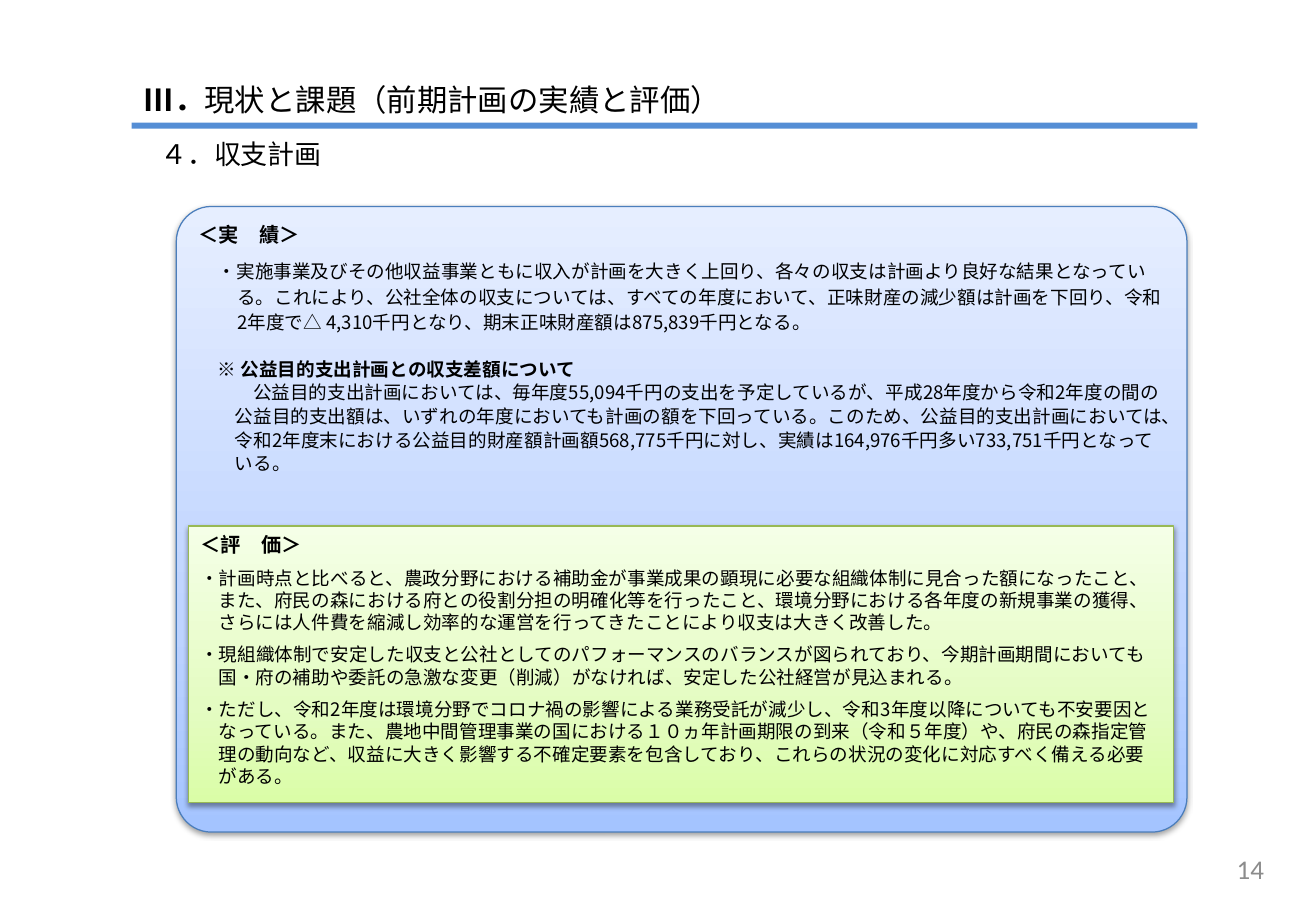
from lxml import etree
from pptx import Presentation
from pptx.dml.color import RGBColor
from pptx.enum.shapes import MSO_SHAPE
from pptx.enum.text import MSO_ANCHOR, MSO_AUTO_SIZE, PP_ALIGN
from pptx.oxml.ns import qn
from pptx.util import Inches, Pt

RECTANGLE, ROUNDED = MSO_SHAPE.RECTANGLE, MSO_SHAPE.ROUNDED_RECTANGLE
TOP, MIDDLE = MSO_ANCHOR.TOP, MSO_ANCHOR.MIDDLE
LEFT, RIGHT = PP_ALIGN.LEFT, PP_ALIGN.RIGHT
NO_AUTOFIT = MSO_AUTO_SIZE.NONE

COLORS = {
    "text": "000000", "page": "8C8C8C", "rule": "558ED5", "shadow": "000000",
    "blue_line": "4B7EBC", "green_line": "98B955",
}
# Gradient stops from the bottom edge upwards: percent -> colour
BLUE_FADE = {0: "A4C4FF", 35: "BFD4FF", 100: "E6EEFF"}
GREEN_FADE = {0: "DAFDA7", 35: "E4FCC2", 100: "F5FFE7"}
JAPANESE, LATIN = "Noto Sans CJK JP", "Calibri"


def rgb(name):
    return RGBColor.from_string(COLORS[name])


def add_color(parent, value, alpha=100):
    color = etree.SubElement(parent, qn("a:srgbClr"), val=value)
    if alpha < 100:
        etree.SubElement(color, qn("a:alpha"), val=str(alpha * 1000))


class SlideBuilder:
    """Places elements by percent of the slide's width and height."""

    def __init__(self, width, height):
        self.deck = Presentation()
        self.deck.slide_width, self.deck.slide_height = Inches(width), Inches(height)
        self.slide = self.deck.slides.add_slide(self.deck.slide_layouts[1])
        self.shapes = self.slide.shapes

    def frame(self, left, top, width, height):
        across, down = self.deck.slide_width / 100, self.deck.slide_height / 100
        return int(left * across), int(top * down), int(width * across), int(height * down)

    def place(self, shape, area):
        shape.left, shape.top, shape.width, shape.height = self.frame(*area)
        self.shapes._spTree.append(shape._element)  # bring to front

    def set_text(self, shape, paragraphs, anchor=TOP):
        frame = shape.text_frame
        frame.word_wrap, frame.auto_size = True, NO_AUTOFIT
        frame.vertical_anchor = anchor
        for index, options in enumerate(paragraphs):
            paragraph = frame.paragraphs[0] if index == 0 else frame.add_paragraph()
            self.style(paragraph, **options)

    def style(self, paragraph, text, size=11, bold=False, bold_lead="", color="text",
              font=JAPANESE, align=LEFT, before=0, spacing=1.0, margin=0, first=0):
        if bold_lead:
            lead = paragraph.add_run()
            lead.text, lead.font.bold = bold_lead, True
        paragraph.add_run().text = text
        paragraph.alignment, paragraph.line_spacing = align, spacing
        paragraph.space_before, paragraph.space_after = Pt(before), Pt(0)
        properties = paragraph._p.get_or_add_pPr()
        properties.set("marL", str(Inches(margin)))
        properties.set("indent", str(Inches(first)))
        etree.SubElement(properties, qn("a:buNone"))
        face = paragraph.font
        face.name, face.size, face.bold = font, Pt(size), bold
        face.color.rgb = rgb(color)
        etree.SubElement(face._element, qn("a:ea"), typeface=font)

    def title(self, area, **options):
        heading = self.shapes.title
        self.place(heading, area)
        self.set_text(heading, [options], MIDDLE)

    def text(self, area, anchor=TOP, **options):
        self.set_text(self.shapes.add_textbox(*self.frame(*area)), [options], anchor)

    def bar(self, area, color):
        bar = self.shapes.add_shape(RECTANGLE, *self.frame(*area))
        bar.fill.solid()
        bar.fill.fore_color.rgb = rgb(color)
        bar.line.fill.background()
        bar.shadow.inherit = False

    def rounded_panel(self, area, corner, fade, line, paragraphs):
        panel = self.shapes.add_shape(ROUNDED, *self.frame(*area))
        panel.adjustments[0] = corner
        self.decorate(panel, fade, line)
        self.set_text(panel, paragraphs)

    def list_panel(self, area, fade, line, paragraphs):
        panel = self.shapes.placeholders[1]
        self.place(panel, area)
        self.decorate(panel, fade, line)
        self.set_text(panel, paragraphs)

    def decorate(self, shape, fade, line):
        shape.fill.gradient()
        shape.fill.gradient_angle = 90
        stops = shape._element.spPr.find(qn("a:gradFill")).find(qn("a:gsLst"))
        stops.clear()
        for percent, value in fade.items():
            add_color(etree.SubElement(stops, qn("a:gs"), pos=str(percent * 1000)), value)
        shape.line.color.rgb, shape.line.width = rgb(line), Pt(0.75)
        # Soft shadow below the panel
        shape.shadow.inherit = False
        effects = shape._element.spPr.find(qn("a:effectLst"))
        shadow = etree.SubElement(effects, qn("a:outerShdw"), blurRad=str(Pt(3.1)),
                                  dist=str(Pt(1.6)), dir="5400000", rotWithShape="0")
        add_color(shadow, COLORS["shadow"], alpha=38)


RESULTS = [
    dict(text="＜実　績＞", size=12, bold=True, before=2.4),
    dict(text="・実施事業及びその他収益事業ともに収入が計画を大きく上回り、各々の収支は計画より良好な結果となっている。"
              "これにより、公社全体の収支については、すべての年度において、正味財産の減少額は計画を下回り、"
              "令和2年度で△ 4,310千円となり、期末正味財産額は875,839千円となる。",
         before=6, spacing=Pt(15), margin=0.32, first=-0.16),
    dict(text="※ 公益目的支出計画との収支差額について", bold=True, before=12, spacing=1.2, first=0.16),
    dict(text="公益目的支出計画においては、毎年度55,094千円の支出を予定しているが、平成28年度から令和2年度の間の"
              "公益目的支出額は、いずれの年度においても計画の額を下回っている。このため、公益目的支出計画においては、"
              "令和2年度末における公益目的財産額計画額568,775千円に対し、実績は164,976千円多い733,751千円となっている。",
         spacing=Pt(14), margin=0.3, first=0.15),
]
EVALUATION_POINTS = [
    "・計画時点と比べると、農政分野における補助金が事業成果の顕現に必要な組織体制に見合った額になったこと、"
    "また、府民の森における府との役割分担の明確化等を行ったこと、環境分野における各年度の新規事業の獲得、"
    "さらには人件費を縮減し効率的な運営を行ってきたことにより収支は大きく改善した。",
    "・現組織体制で安定した収支と公社としてのパフォーマンスのバランスが図られており、"
    "今期計画期間においても国・府の補助や委託の急激な変更（削減）がなければ、安定した公社経営が見込まれる。",
    "・ただし、令和2年度は環境分野でコロナ禍の影響による業務受託が減少し、令和3年度以降についても不安要因となっている。"
    "また、農地中間管理事業の国における１０ヵ年計画期限の到来（令和５年度）や、府民の森指定管理の動向など、"
    "収益に大きく影響する不確定要素を包含しており、これらの状況の変化に対応すべく備える必要がある。",
]
EVALUATION = [dict(text="＜評　価＞", size=12, bold=True, before=2.4)] + [
    dict(text=point, before=6, margin=0.15, first=-0.15) for point in EVALUATION_POINTS
]


def main():
    page = SlideBuilder(10.83, 7.5)
    # Heading, rule and section name
    page.title((10, 7.33, 48.75, 7.2), bold_lead="Ⅲ．",
               text="現状と課題（前期計画の実績と評価）", size=18)
    page.bar((10, 13.47, 81, 0.67), "rule")
    page.text((11.27, 14.4, 38, 4.93), text="４．収支計画", size=16)
    # Results, with the evaluation list on top
    page.rounded_panel((13.4, 22.67, 76.8, 68.67), 0.056, BLUE_FADE, "blue_line", RESULTS)
    page.list_panel((14.3, 57.73, 74.9, 30.4), GREEN_FADE, "green_line", EVALUATION)
    # Page number
    page.text((73.6, 92.67, 23.36, 5.33), MIDDLE, text="14", size=16,
              color="page", font=LATIN, align=RIGHT)
    page.deck.save("out.pptx")


if __name__ == "__main__":
    main()
